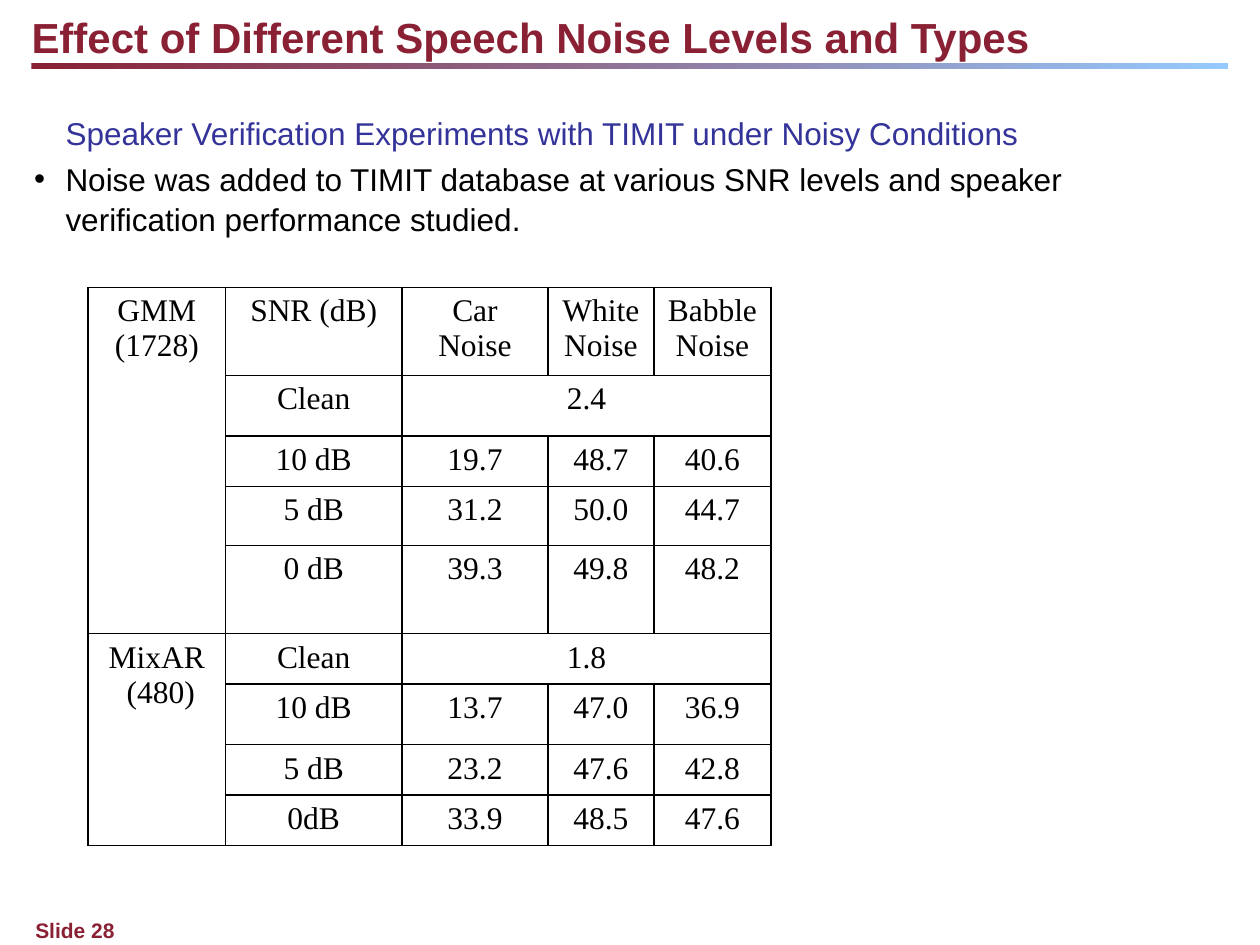
import pptx
import pptx.util
import pptx.dml.color
import pptx.enum.shapes
import pptx.enum.text
import pptx.oxml.ns
from lxml import etree

Inches, Pt = pptx.util.Inches, pptx.util.Pt
ALIGN = pptx.enum.text.PP_ALIGN
COLORS = {"maroon": "892034", "sky": "95CAFF", "indigo": "333399", "black": "000000"}

COL_WIDTHS = [1.09, 1.4, 1.16, 0.84, 0.93]
ROW_HEIGHTS = [0.7, 0.48, 0.4, 0.47, 0.7, 0.4, 0.48, 0.4, 0.4]
ROWS = [
    ["GMM\n(1728)", "SNR (dB)", "Car Noise", "White Noise", "Babble Noise"],
    ["", "Clean", "2.4", "", ""],
    ["", "10 dB", "19.7", "48.7", "40.6"],
    ["", "5 dB", "31.2", "50.0", "44.7"],
    ["", "0 dB", "39.3", "49.8", "48.2"],
    ["MixAR\n (480)", "Clean", "1.8", "", ""],
    ["", "10 dB", "13.7", "47.0", "36.9"],
    ["", "5 dB", "23.2", "47.6", "42.8"],
    ["", "0dB", "33.9", "48.5", "47.6"],
]
# (first row, first column, last row, last column)
MERGES = [(0, 0, 4, 0), (5, 0, 8, 0), (1, 2, 1, 4), (5, 2, 5, 4)]


def rgb(name):
    return pptx.dml.color.RGBColor.from_string(COLORS[name])


def sub(parent, tag, **attrs):
    return etree.SubElement(parent, pptx.oxml.ns.qn(tag), attrs)


def style(p, size, color, font="Arial", bold=False, align=ALIGN.LEFT):
    p.alignment = align
    for r in p.runs:
        r.font.name, r.font.size, r.font.bold = font, Pt(size), bold
        r.font.color.rgb = rgb(color)


def place(sp, left, top, width, height):
    sp.left, sp.top = Inches(left), Inches(top)
    sp.width, sp.height = Inches(width), Inches(height)
    tf = sp.text_frame
    tf.margin_left = tf.margin_right = tf.margin_top = tf.margin_bottom = 0
    tf.word_wrap = True
    tf.auto_size = pptx.enum.text.MSO_AUTO_SIZE.NONE
    tf.vertical_anchor = pptx.enum.text.MSO_ANCHOR.TOP
    return tf


def add_header(s, left, top, width, height):
    # Title with a gradient rule below it
    tf = place(s.shapes.title, left, top, width, height)
    tf.text = "Effect of Different Speech Noise Levels and Types"
    style(tf.paragraphs[0], 24, "maroon", bold=True)
    rule = s.shapes.add_shape(pptx.enum.shapes.MSO_SHAPE.RECTANGLE, Inches(left),
                              Inches(top + 0.41), Inches(width), Inches(0.05))
    rule.shadow.inherit = False
    rule.line.fill.background()
    rule.fill.gradient()
    rule.fill.gradient_angle = 0
    for stop, position, color in zip(rule.fill.gradient_stops, (0, 1), ("maroon", "sky")):
        stop.position = position
        stop.color.rgb = rgb(color)


def add_body(s, left, top, width, height):
    # Unbulleted heading line, then one bullet
    tf = place(s.placeholders[1], left, top, width, height)
    tf.text = ("Speaker Verification Experiments with TIMIT under Noisy Conditions\n"
               "Noise was added to TIMIT database at various SNR levels and speaker "
               "verification performance studied.")
    heading, bullet = tf.paragraphs
    for p, indent, mark in ((heading, 0, None), (bullet, -0.25, "•")):
        pPr = p._p.get_or_add_pPr()
        pPr.set("marL", str(Inches(0.25)))
        pPr.set("indent", str(Inches(indent)))
        if mark:
            sub(pPr, "a:buChar", char=mark)
        else:
            sub(pPr, "a:buNone")
        p.line_spacing = 1.05
        p.space_before = Pt(3.6) if mark else Pt(0)
    style(heading, 18, "indigo")
    style(bullet, 18, "black")


def add_borders(cell):
    tcPr = cell._tc.get_or_add_tcPr()
    for side in "LRTB":
        ln = sub(tcPr, "a:ln" + side, w=str(Pt(1)))
        sub(sub(ln, "a:solidFill"), "a:srgbClr", val=COLORS["black"])


def add_results(s, left, top):
    # Verification results by model, SNR and noise type
    table = s.shapes.add_table(len(ROWS), len(COL_WIDTHS), Inches(left), Inches(top),
                               Inches(sum(COL_WIDTHS)), Inches(sum(ROW_HEIGHTS))).table
    table.first_row = table.horz_banding = False
    for column, width in zip(table.columns, COL_WIDTHS):
        column.width = Inches(width)
    for row, height, texts in zip(table.rows, ROW_HEIGHTS, ROWS):
        row.height = Inches(height)
        for cell, text in zip(row.cells, texts):
            cell.text = text
            add_borders(cell)
            cell.fill.background()
            for p in cell.text_frame.paragraphs:
                style(p, 18, "black", "Times New Roman", align=ALIGN.CENTER)
    for r1, c1, r2, c2 in MERGES:
        table.cell(r1, c1).merge(table.cell(r2, c2))


def add_footer(s, left, top, width, height):
    box = s.shapes.add_textbox(0, 0, 0, 0)
    tf = place(box, left, top, width, height)
    tf.text = "Slide 28"
    style(tf.paragraphs[0], 12, "maroon", bold=True)


def main():
    prs = pptx.Presentation()
    prs.slide_width, prs.slide_height = Inches(10), Inches(7.5)
    s = prs.slides.add_slide(prs.slide_layouts[1])
    add_header(s, 0.25, 0.09, 9.5, 0.4)
    add_body(s, 0.27, 0.89, 8.64, 0.96)
    add_results(s, 0.7, 2.28)
    add_footer(s, 0.28, 7.28, 8.92, 0.2)
    prs.save("out.pptx")


if __name__ == "__main__":
    main()
